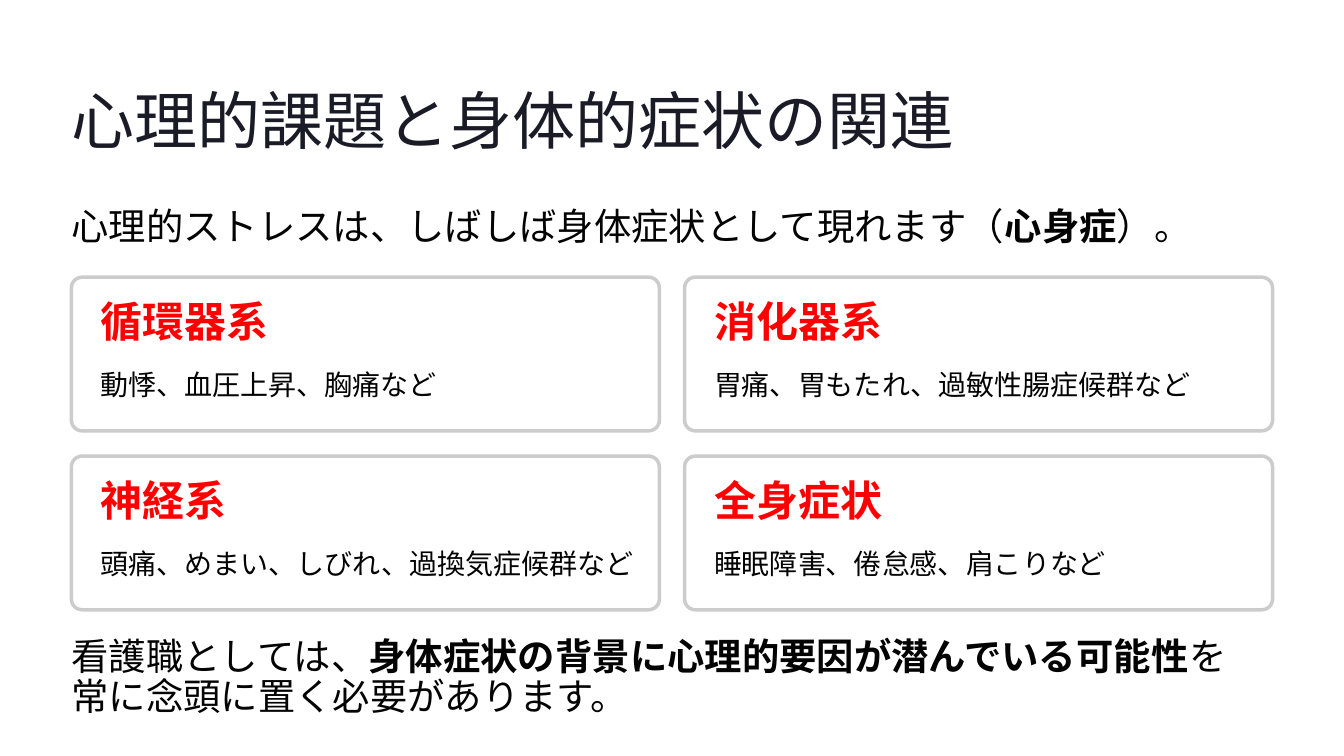
from lxml import etree
from pptx import Presentation
from pptx.dml.color import RGBColor
from pptx.enum.shapes import MSO_SHAPE
from pptx.oxml.ns import qn
from pptx.util import Inches, Pt

ROUNDED = MSO_SHAPE.ROUNDED_RECTANGLE
NAVY = RGBColor(0x1B, 0x1B, 0x27)
BLACK = RGBColor(0x03, 0x03, 0x03)
RED = RGBColor(0xFF, 0x00, 0x00)
GREY = RGBColor(0xCC, 0xCC, 0xCC)
WHITE = RGBColor(0xFF, 0xFF, 0xFF)

TITLE = "心理的課題と身体的症状の関連"
INTRO = [[("心理的ストレスは、しばしば身体症状として現れます（", False),
          ("心身症", True), ("）。", False)]]
SYSTEMS = [
    ("循環器系", "動悸、血圧上昇、胸痛など"),
    ("消化器系", "胃痛、胃もたれ、過敏性腸症候群など"),
    ("神経系", "頭痛、めまい、しびれ、過換気症候群など"),
    ("全身症状", "睡眠障害、倦怠感、肩こりなど"),
]
CONCLUSION = [
    [("看護職としては、", False),
     ("身体症状の背景に心理的要因が潜んでいる可能性", True), ("を", False)],
    [("常に念頭に置く必要があります。", False)],
]

MARGIN, FULL_WIDTH = 0.85, 14.31
CARDS_TOP, CARD_WIDTH, CARD_HEIGHT, GAP = 3.3, 7, 1.83, 0.3
PADDING, DETAIL_WIDTH = 0.35, 6.45
TITLE_STYLE = ("Inter", 54, NAVY, 68)
BODY_STYLE = ("Roboto", 32, BLACK, 34.5)
HEADING_STYLE = ("Inter", 36, RED, 34)
DETAIL_STYLE = ("Roboto", 24, BLACK, 34.5)


def add_text(slide, lines, left, top, width, height, style):
    font_name, size, color, spacing = style
    frame = slide.shapes.add_textbox(
        Inches(left), Inches(top), Inches(width), Inches(height)).text_frame
    frame.margin_left = frame.margin_right = 0
    frame.margin_top = frame.margin_bottom = 0
    frame.word_wrap = False
    for index, line in enumerate(lines):
        paragraph = frame.add_paragraph() if index else frame.paragraphs[0]
        paragraph.line_spacing = Pt(spacing)
        paragraph.font.name = font_name
        paragraph.font.size = Pt(size)
        paragraph.font.color.rgb = color
        for text, bold in line:
            run = paragraph.add_run()
            run.text = text
            run.font.bold = bold


def add_card(slide, left, top, heading, detail):
    card = slide.shapes.add_shape(
        ROUNDED, Inches(left), Inches(top), Inches(CARD_WIDTH), Inches(CARD_HEIGHT))
    card.adjustments[0] = 0.07
    card.shadow.inherit = False
    card.fill.solid()
    card.fill.fore_color.rgb = WHITE
    fill_color = card.fill._xPr.find(qn("a:solidFill"))[0]
    etree.SubElement(fill_color, qn("a:alpha")).set("val", "95000")
    card.line.color.rgb = GREY
    card.line.width = Pt(3)
    text_left = left + PADDING
    add_text(slide, [[(heading, True)]], text_left, top + PADDING, 3.78, 0.47, HEADING_STYLE)
    add_text(slide, [[(detail, False)]], text_left, top + 1, DETAIL_WIDTH, 0.48, DETAIL_STYLE)


def main():
    deck = Presentation()
    deck.slide_width, deck.slide_height = Inches(16), Inches(9)
    slide = deck.slides.add_slide(deck.slide_layouts[6])
    add_text(slide, [[(TITLE, False)]], MARGIN, 0.92, 10.59, 0.95, TITLE_STYLE)
    add_text(slide, INTRO, MARGIN, 2.47, FULL_WIDTH, 0.48, BODY_STYLE)
    for index, (heading, detail) in enumerate(SYSTEMS):
        row, column = divmod(index, 2)
        add_card(slide, MARGIN + column * (CARD_WIDTH + GAP),
                 CARDS_TOP + row * (CARD_HEIGHT + GAP), heading, detail)
    add_text(slide, CONCLUSION, MARGIN, 7.59, FULL_WIDTH, 0.48, BODY_STYLE)
    deck.save("out.pptx")


if __name__ == "__main__":
    main()
